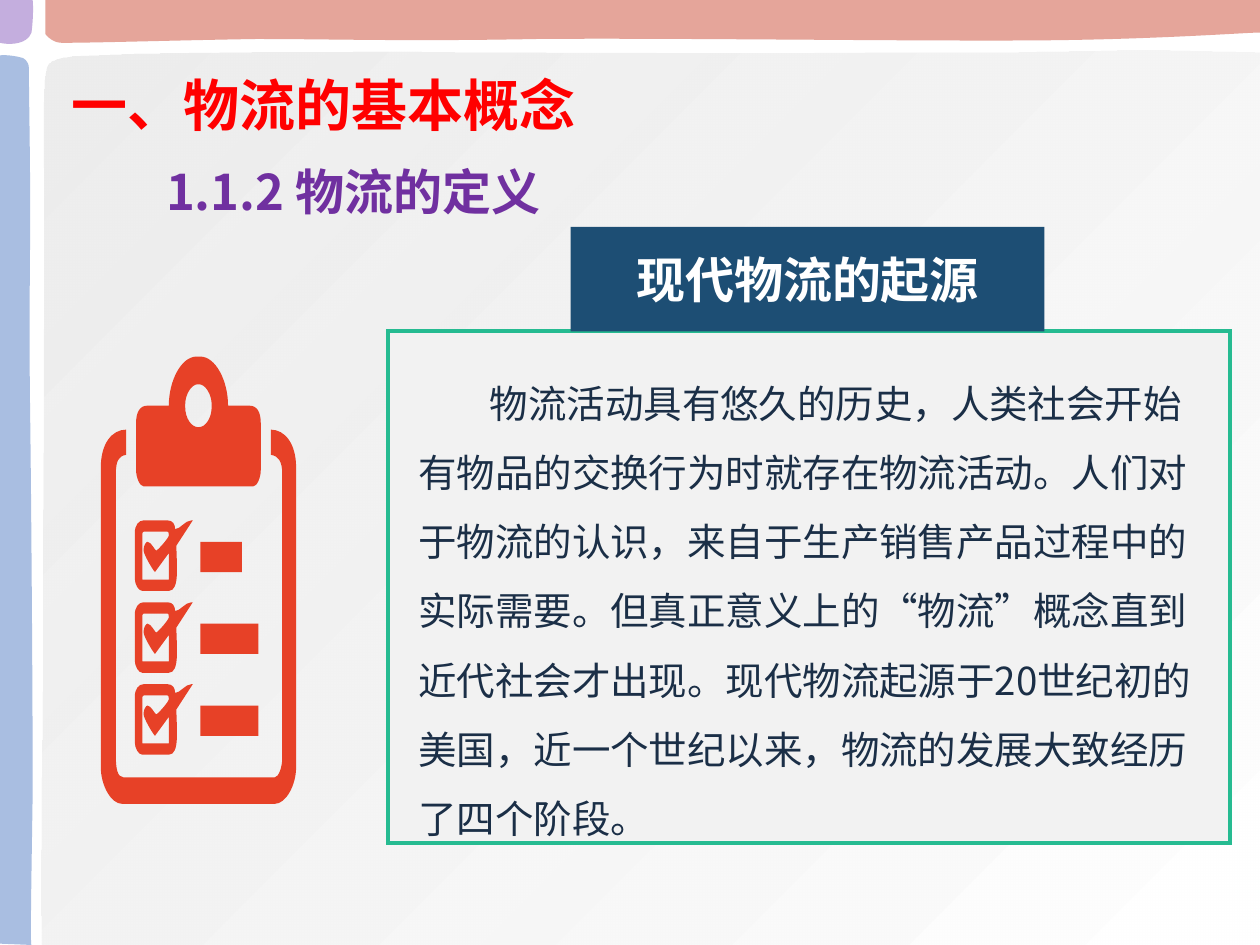
from lxml.etree import SubElement
from pptx import Presentation
from pptx.dml.color import RGBColor
from pptx.enum.shapes import MSO_SHAPE as Preset
from pptx.enum.text import MSO_ANCHOR as Anchor, MSO_AUTO_SIZE as AutoSize, PP_ALIGN as Align
from pptx.oxml.ns import qn
from pptx.util import Inches, Pt

SANS_SC, SANS_JP = "Noto Sans CJK SC", "Noto Sans CJK JP"
HEADING = "一、物流的基本概念"
SUBHEADING = "1.1.2 物流的定义"
BANNER = "现代物流的起源"
ORIGIN = (
    " 物流活动具有悠久的历史，人类社会开始有物品的交换行为时就存在物流活动。"
    "人们对于物流的认识，来自于生产销售产品过程中的实际需要。"
    "但真正意义上的“物流”概念直到近代社会才出现。"
    "现代物流起源于20世纪初的美国，近一个世纪以来，物流的发展大致经历了四个阶段。"
)

PANEL = """M 10 7.5 L 10 0.42 C 8.86 0.38 8.55 0.42 7.6 0.42
C 6.66 0.42 5.5 0.43 4.33 0.42 C 3.16 0.41 1.23 0.41 0.57 0.45
C 0.36 0.48 0.36 0.49 0.35 0.73 C 0.34 0.96 0.35 1.1 0.35 1.82
C 0.35 2.56 0.34 4.12 0.34 5.06 C 0.34 6.01 0.32 6.62 0.33 7.5 Z"""
EDGES = [
    ("DA7F70", """M 10 0 L 10 0.26 C 10.01 0.25 9.28 0.31 8.32 0.32
    C 7.36 0.33 5.31 0.3 4.26 0.31 C 3.21 0.33 2.65 0.31 2.03 0.31
    C 1.4 0.32 0.77 0.34 0.49 0.34 C 0.41 0.34 0.36 0.27 0.36 0.27
    C 0.36 0.27 0.36 0.14 0.36 0 Z"""),
    ("85A3D5", """M 0 7.49 L 0.25 7.5 C 0.24 7.5 0.25 6.98 0.26 6.28
    C 0.26 5.58 0.25 4.07 0.24 3.3 C 0.23 2.54 0.24 2.12 0.24 1.67
    C 0.24 1.21 0.23 0.75 0.23 0.54 C 0.23 0.48 0.18 0.46 0.18 0.46
    C 0.07 0.43 0 0.44 0 0.44 Z"""),
    ("AC8CD0", """M 0 0 L 0.26 0 C 0.27 0.12 0.25 0.26 0.25 0.26
    C 0.23 0.31 0.19 0.33 0.15 0.34 C 0.07 0.36 0 0.34 0 0.34 Z"""),
]
CLIPBOARD = """M 0.92 3.76 C 0.92 3.66 0.94 3.62 1 3.61 L 1 3.41
C 0.89 3.41 0.8 3.52 0.8 3.71 L 0.8 6.09 C 0.8 6.23 0.88 6.38 0.97 6.38
L 2.18 6.38 C 2.27 6.38 2.35 6.23 2.35 6.09 L 2.35 3.71
C 2.35 3.52 2.26 3.41 2.15 3.41 L 2.15 3.61 C 2.21 3.62 2.24 3.66 2.24 3.76
L 2.24 6.02 C 2.24 6.09 2.21 6.17 2.18 6.17 L 0.98 6.17
C 0.93 6.17 0.92 6.09 0.92 6.01 Z
M 1.47 3.21 C 1.47 3.13 1.52 3.05 1.57 3.05 L 1.58 3.05
C 1.63 3.05 1.68 3.13 1.68 3.21 L 1.68 3.23 C 1.68 3.32 1.63 3.39 1.58 3.39
L 1.57 3.39 C 1.52 3.39 1.47 3.32 1.47 3.23 Z
M 1.34 3.22 L 1.17 3.22 C 1.11 3.22 1.08 3.27 1.08 3.36 L 1.08 3.73
C 1.08 3.79 1.11 3.86 1.14 3.86 L 2.01 3.86 C 2.04 3.86 2.07 3.79 2.07 3.73
L 2.07 3.36 C 2.07 3.27 2.04 3.22 1.98 3.22 L 1.81 3.22
C 1.81 3.02 1.71 2.83 1.59 2.83 L 1.56 2.83 C 1.44 2.83 1.34 3.02 1.34 3.22 Z"""
CHECKBOX = """M 1.13 4.25 C 1.13 4.23 1.13 4.22 1.14 4.22 L 1.33 4.22
C 1.34 4.22 1.34 4.23 1.34 4.25 C 1.34 4.27 1.25 4.37 1.24 4.37
C 1.23 4.37 1.2 4.3 1.17 4.3 C 1.16 4.3 1.14 4.33 1.14 4.36 L 1.14 4.37
C 1.14 4.4 1.21 4.52 1.23 4.54 L 1.34 4.39 L 1.34 4.6 L 1.13 4.6 Z
M 1.39 4.2 C 1.39 4.16 1.37 4.13 1.33 4.13 L 1.14 4.13
C 1.1 4.13 1.07 4.17 1.07 4.23 L 1.07 4.59 C 1.07 4.64 1.1 4.69 1.13 4.69
L 1.34 4.69 C 1.43 4.69 1.4 4.47 1.4 4.33 L 1.53 4.13 L 1.52 4.13
C 1.47 4.13 1.43 4.2 1.39 4.2 Z"""
BAR_LEFT, BAR_TOP, BAR_HEIGHT, ROW_PITCH = 1.59, 4.3, 0.24, 0.65
BAR_WIDTHS = [0.33, 0.46, 0.46]


def rgb(code):
    return RGBColor.from_string(code)


def paint(shape, color):
    shape.fill.solid()
    shape.fill.fore_color.rgb = rgb(color)


def set_alpha(fill_xml, percent):
    for color in fill_xml.iter(qn("a:srgbClr")):
        SubElement(color, qn("a:alpha")).set("val", str(percent * 1000))


def trace(outline, drop=0):
    steps, numbers = [], []
    for token in outline.split():
        if token in "MLCZ":
            command, numbers = token, []
            continue
        numbers.append(float(token))
        if len(numbers) == (6 if command == "C" else 2):
            steps.append((command, list(zip(numbers[::2], (y + drop for y in numbers[1::2])))))
    return steps


def strip(shape):
    shape.shadow.inherit = False
    shape.line.fill.background()
    return shape


def draw(shapes, steps):
    contours = []
    for command, points in steps:
        if command == "M":
            contours.append([])
        contours[-1] += [(Inches(x), Inches(y)) for x, y in points]
    builder = shapes.build_freeform(*contours[0][0])
    for number, contour in enumerate(contours):
        if number:
            builder.move_to(*contour[0])
        builder.add_line_segments(contour[1:], close=True)
    shape = strip(builder.convert_to_shape())
    segments = [part for part in next(shape._element.iter(qn("a:path")))
                if part.tag != qn("a:close")]
    for command, points in steps:
        first, *others = segments[:len(points)]
        segments = segments[len(points):]
        if command == "C":
            first.tag = qn("a:cubicBezTo")
            for other in others:
                first.append(other[0])
                other.getparent().remove(other)
    return shape


def add_box(shapes, box, color):
    shape = strip(shapes.add_shape(Preset.RECTANGLE, *map(Inches, box)))
    paint(shape, color)
    return shape


def write(shape, text, face, size, color, bold=False, align=Align.LEFT,
          anchor=Anchor.TOP, margins=(0.1, 0.05), fit=AutoSize.NONE):
    side, end = map(Inches, margins)
    frame = shape.text_frame
    frame_format = {"word_wrap": True, "auto_size": fit, "vertical_anchor": anchor,
                    "margin_left": side, "margin_right": side,
                    "margin_top": end, "margin_bottom": end}
    for key, value in frame_format.items():
        setattr(frame, key, value)
    paragraph = frame.paragraphs[0]
    paragraph.alignment = align
    run = paragraph.add_run()
    run.text = text
    for key, value in {"name": face, "size": Pt(size), "bold": bold}.items():
        setattr(run.font, key, value)
    run.font.color.rgb = rgb(color)
    SubElement(run.font._element, qn("a:ea")).set("typeface", face)
    return paragraph


def main():
    deck = Presentation()
    deck.slide_width, deck.slide_height = Inches(10), Inches(7.5)
    slide = deck.slides.add_slide(deck.slide_layouts[5])
    shapes = slide.shapes

    panel = draw(shapes, trace(PANEL))
    panel.fill.gradient()
    panel.fill.gradient_angle = 315
    for stop, color, position in zip(panel.fill.gradient_stops, ("E6E6E6", "FFFFFF"), (0, 1)):
        stop.color.rgb, stop.position = rgb(color), position
    set_alpha(next(panel._element.iter(qn("a:gs"))), 70)
    backdrop = [panel]
    for color, outline in EDGES:
        edge = draw(shapes, trace(outline))
        paint(edge, color)
        set_alpha(edge._element.spPr, 70)
        backdrop.append(edge)
    for order, part in enumerate(backdrop):
        part._element.nvSpPr.cNvPr.set("id", str(20 + order))
        deck.slide_master.shapes._spTree.insert(2 + order, part._element)

    subheading = shapes.add_textbox(*map(Inches, (1.22, 1.23, 4.33, 0.57)))
    write(subheading, SUBHEADING, SANS_SC, 28, "7030A0", bold=True,
          fit=AutoSize.SHAPE_TO_FIT_TEXT)

    heading = shapes.title
    heading.left, heading.top, heading.width, heading.height = map(
        Inches, (0.47, 0.31, 7.36, 1.03))
    write(heading, HEADING, SANS_JP, 32, "FF0000", bold=True, anchor=Anchor.MIDDLE)

    checklist = trace(CLIPBOARD)
    for row, width in enumerate(BAR_WIDTHS):
        drop = row * ROW_PITCH
        top, right = BAR_TOP + drop, BAR_LEFT + width
        bottom = top + BAR_HEIGHT
        corners = [(BAR_LEFT, top), (right, top), (right, bottom), (BAR_LEFT, bottom)]
        checklist += trace(CHECKBOX, drop)
        checklist += [(command, [corner]) for command, corner in zip("MLLL", corners)]
    paint(draw(shapes, checklist), "E74127")

    card = add_box(shapes, (3.08, 2.63, 6.68, 4.06), "F2F2F2")
    card.line.color.rgb = rgb("26BB91")
    card.line.width = Pt(2.25)
    SubElement(card.line._ln, qn("a:miter")).set("lim", "800000")

    banner = add_box(shapes, (4.53, 1.8, 3.76, 0.83), "1D4E74")
    write(banner, BANNER, SANS_SC, 28, "FFFFFF", bold=True, align=Align.CENTER,
          anchor=Anchor.MIDDLE, margins=(0.13, 0.07))

    origin = shapes.add_textbox(*map(Inches, (3.32, 2.83, 6.19, 3.89)))
    paragraph = write(origin, ORIGIN, SANS_SC, 22, "1B2F47", margins=(0, 0),
                      fit=AutoSize.SHAPE_TO_FIT_TEXT)
    paragraph.line_spacing = 1.5
    paragraph._p.get_or_add_pPr().set("indent", str(Inches(0.5)))

    deck.save("out.pptx")


if __name__ == "__main__":
    main()
